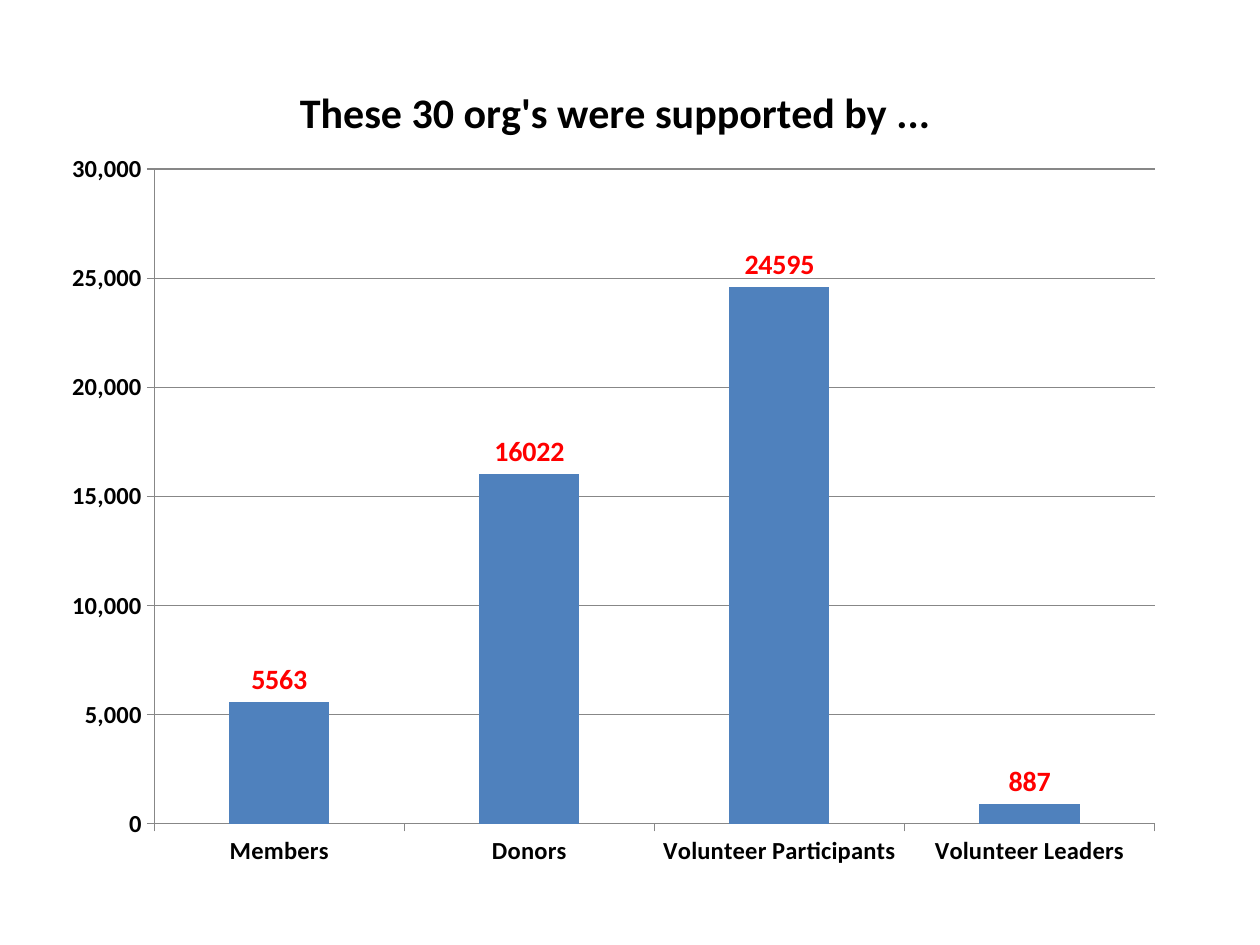
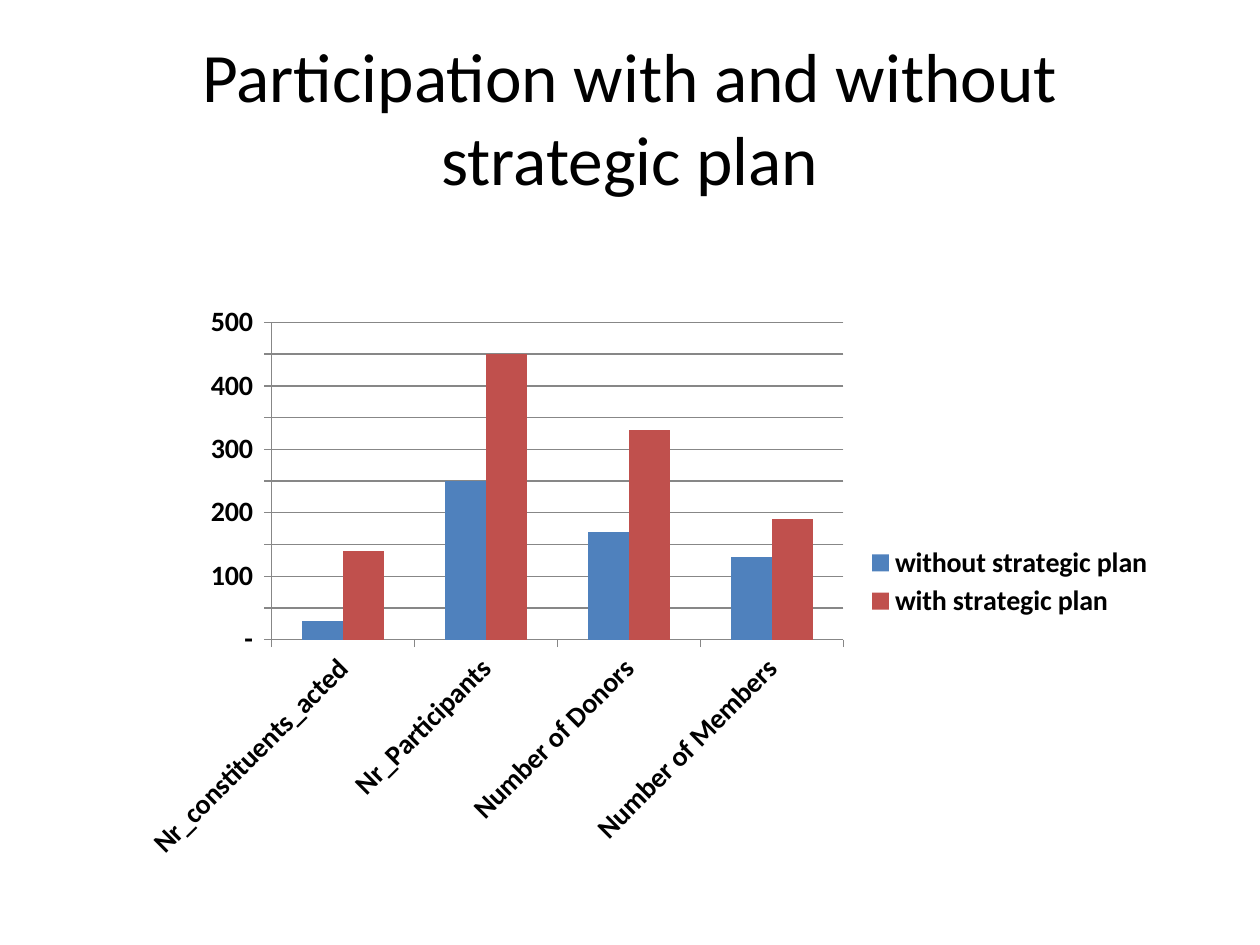
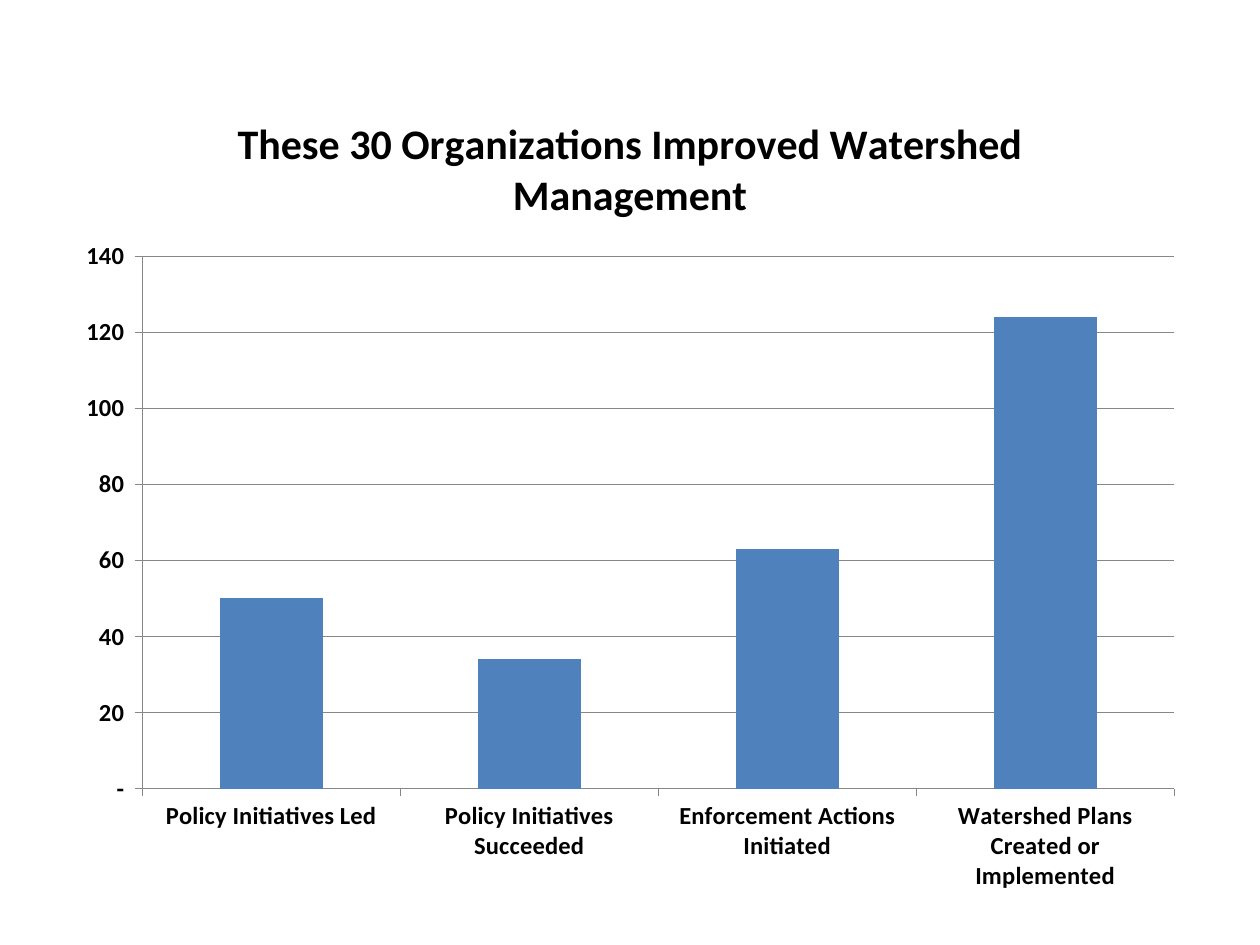
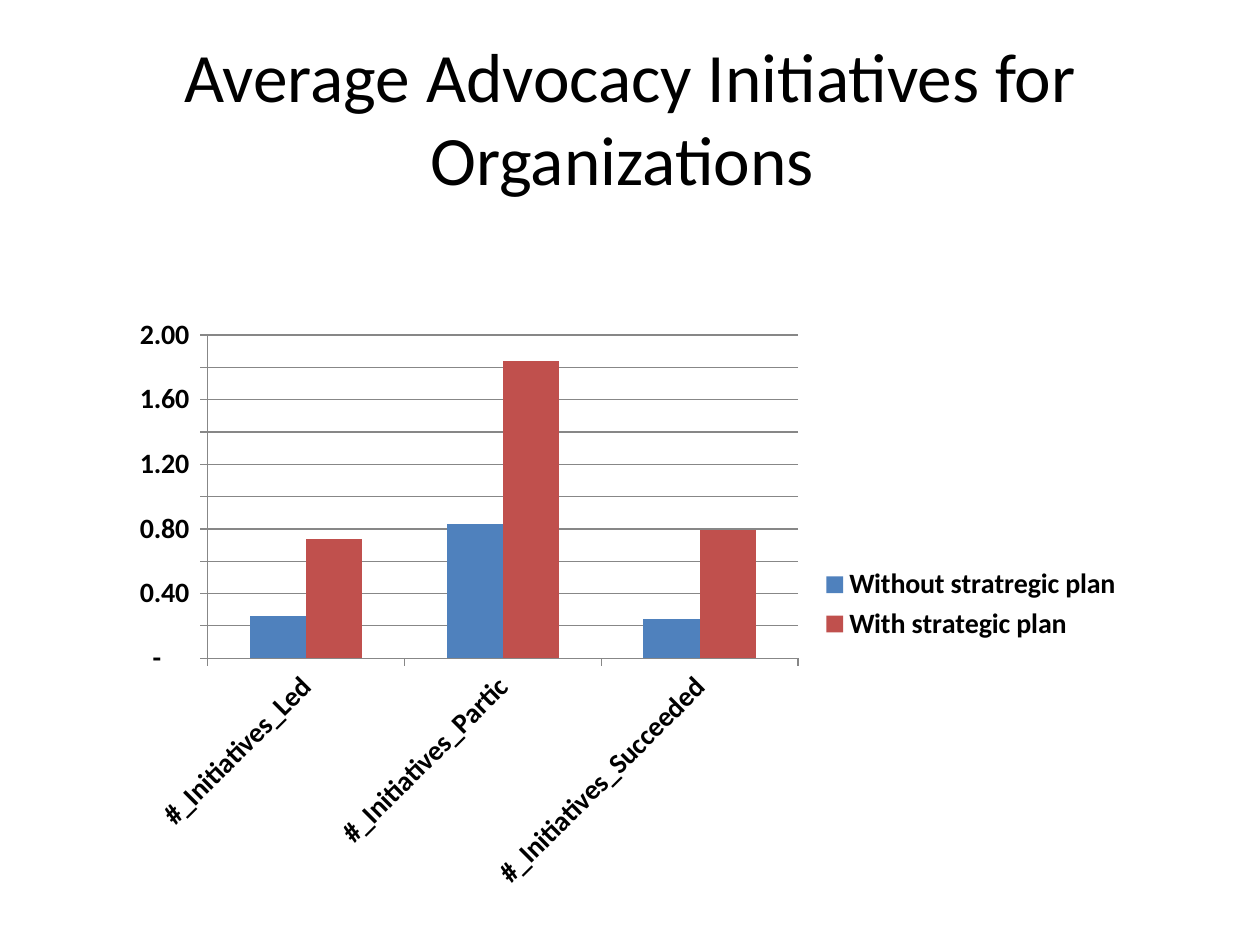
from lxml import etree
from pptx import Presentation
from pptx.chart.data import CategoryChartData
from pptx.dml.color import RGBColor
from pptx.enum.chart import XL_CHART_TYPE, XL_LABEL_POSITION, XL_LEGEND_POSITION, XL_TICK_MARK
from pptx.enum.text import MSO_ANCHOR, PP_ALIGN
from pptx.oxml.ns import qn
from pptx.util import Cm, Pt

COLUMNS = XL_CHART_TYPE.COLUMN_CLUSTERED
OUTSIDE_END = XL_LABEL_POSITION.OUTSIDE_END
LEGEND_RIGHT = XL_LEGEND_POSITION.RIGHT
TICK_OUT = XL_TICK_MARK.OUTSIDE
TICK_NONE = XL_TICK_MARK.NONE
MIDDLE = MSO_ANCHOR.MIDDLE
CENTER = PP_ALIGN.CENTER

# Shared style
FONT = "Calibri"
BLACK, BLUE, RED, GREY = "000000", "4F81BD", "C0504D", "878787"
LABEL_RED = "FF0000"
SERIES_COLORS = (BLUE, RED)
TITLE_ONLY, BLANK = 5, 6
PLAIN = "#,##0"
WHOLE = '_(* #,##0_);_(* \\(#,##0\\);_(* "-"_);_(@_)'
DECIMAL = '_(* #,##0.00_);_(* \\(#,##0.00\\);_(* "-"??_);_(@_)'


def color(hex_text):
    return RGBColor.from_string(hex_text)


def style_font(font, size, bold=False, hex_text=BLACK):
    font.name = FONT
    font.size = Pt(size)
    font.bold = bold
    font.color.rgb = color(hex_text)


def add_titled_slide(deck, text):
    page = deck.slides.add_slide(deck.slide_layouts[TITLE_ONLY])
    title = page.shapes.title
    title.left, title.top, title.width, title.height = Cm(1.27), Cm(0.76), Cm(22.86), Cm(3.18)
    frame = title.text_frame
    frame.text = text
    frame.vertical_anchor = MIDDLE
    para = frame.paragraphs[0]
    para.alignment = CENTER
    style_font(para.runs[0].font, 39.6)
    return page


def add_column_chart(page, place, categories, series):
    """Add a clustered column chart; series maps each name to its values."""
    data = CategoryChartData()
    data.categories = categories
    for name, values in series.items():
        data.add_series(name, values)
    chart = page.shapes.add_chart(COLUMNS, *map(Cm, place), data).chart
    style_font(chart.font, 10)
    chart.has_title = False
    chart.has_legend = False
    plot = chart.plots[0]
    plot.vary_by_categories = False
    plot.gap_width = 150
    plot.overlap = 0
    for column, hex_text in zip(plot.series, SERIES_COLORS):
        column.format.fill.solid()
        column.format.fill.fore_color.rgb = color(hex_text)
    return chart


def style_axes(chart, size, maximum, step, number_format):
    value_axis = chart.value_axis
    for axis in (chart.category_axis, value_axis):
        axis.major_tick_mark = TICK_OUT
        axis.minor_tick_mark = TICK_NONE
        style_font(axis.tick_labels.font, size, bold=True)
        style_line(axis.format.line)
    value_axis.minimum_scale = 0
    value_axis.maximum_scale = maximum
    value_axis.major_unit = step
    value_axis.has_major_gridlines = True
    style_line(value_axis.major_gridlines.format.line)
    value_axis.tick_labels.number_format = number_format
    value_axis.tick_labels.number_format_is_linked = False


def style_line(line):
    line.color.rgb = color(GREY)
    line.width = Pt(0.75)


def make_layout(fractions, inner=False):
    """Build a manual layout from x, y, width and height as shares of the chart."""
    layout = etree.Element(qn("c:layout"))
    manual = etree.SubElement(layout, qn("c:manualLayout"))
    settings = [("layoutTarget", "inner")] if inner else []
    settings += [("xMode", "edge"), ("yMode", "edge")]
    settings += zip("xywh", map(str, fractions))
    for tag, value in settings:
        etree.SubElement(manual, qn("c:" + tag)).set("val", value)
    return layout


def place_plot(chart, fractions):
    area = chart.element.find(".//" + qn("c:plotArea"))
    for old in area.findall(qn("c:layout")):
        area.remove(old)
    area.insert(0, make_layout(fractions, inner=True))


def add_chart_title(chart, text):
    chart.has_title = True
    frame = chart.chart_title.text_frame
    frame.text = text
    style_font(frame.paragraphs[0].runs[0].font, 24, bold=True)
    chart.chart_title.include_in_layout = False


def add_legend(chart, fractions):
    chart.has_legend = True
    chart.legend.position = LEGEND_RIGHT
    chart.legend.include_in_layout = False
    style_font(chart.legend.font, 16, bold=True)
    legend = chart.element.find(".//" + qn("c:legend"))
    for old in legend.findall(qn("c:layout")):
        legend.remove(old)
    legend.find(qn("c:legendPos")).addnext(make_layout(fractions))


def slant_categories(chart):
    for body in chart.element.xpath(".//c:catAx/c:txPr/a:bodyPr"):
        body.set("rot", "-2700000")
        body.set("vert", "horz")


def add_value_labels(chart):
    plot = chart.plots[0]
    plot.has_data_labels = True
    labels = plot.data_labels
    labels.show_value = True
    labels.position = OUTSIDE_END
    style_font(labels.font, 16, bold=True, hex_text=LABEL_RED)


def add_total_slide(deck, title, place, plot_place, totals, axis):
    """Slide with one series, titled inside the chart."""
    page = deck.slides.add_slide(deck.slide_layouts[BLANK])
    chart = add_column_chart(page, place, list(totals), {"Series 1": list(totals.values())})
    add_chart_title(chart, title)
    style_axes(chart, 14, *axis)
    place_plot(chart, plot_place)
    return chart


def add_comparison_slide(deck, title, place, plot_place, legend_place, categories, series, axis):
    """Slide comparing organizations without and with a plan."""
    page = add_titled_slide(deck, title)
    chart = add_column_chart(page, place, categories, series)
    style_axes(chart, 16, *axis)
    slant_categories(chart)
    place_plot(chart, plot_place)
    add_legend(chart, legend_place)


def main():
    deck = Presentation()
    deck.slide_width, deck.slide_height = Cm(25.4), Cm(19.05)

    # Supporters
    supporters = add_total_slide(
        deck, "These 30 org's were supported by ...",
        (1.07, 1.07, 22.66, 16.71), (0.09, 0.14, 0.89, 0.79),
        {"Members": 5563, "Donors": 16022,
         "Volunteer Participants": 24595, "Volunteer Leaders": 887},
        (30000, 5000, PLAIN))
    add_value_labels(supporters)

    # Participation
    add_comparison_slide(
        deck, "Participation with and without strategic plan",
        (2.54, 5.92, 20.96, 11.63), (0.14, 0.05, 0.55, 0.55), (0.71, 0.43, 0.28, 0.14),
        ["Nr_constituents_acted", "Nr_Participants", "Number of Donors", "Number of Members"],
        {"without strategic plan": [30, 250, 170, 130],
         "with strategic plan": [140, 450, 330, 190]},
        (500, 50, WHOLE))

    # Watershed management
    add_total_slide(
        deck, "These 30 Organizations Improved Watershed Management",
        (1.27, 1.7, 22.86, 16.51), (0.07, 0.21, 0.91, 0.65),
        {"Policy Initiatives Led": 50, "Policy Initiatives Succeeded": 34,
         "Enforcement Actions Initiated": 63, "Watershed Plans Created or Implemented": 124},
        (140, 20, WHOLE))

    # Advocacy
    add_comparison_slide(
        deck, "Average Advocacy Initiatives for Organizations ",
        (2.34, 6.15, 20.52, 12.07), (0.09, 0.05, 0.58, 0.54), (0.69, 0.43, 0.3, 0.14),
        ["#_Initiatives_Led", "#_Initiatives_Partic", "#_Initiatives_Succeeded"],
        {"Without stratregic plan": [0.26, 0.83, 0.24],
         "With strategic plan": [0.74, 1.84, 0.79]},
        (2, 0.2, DECIMAL))

    deck.save("out.pptx")


if __name__ == "__main__":
    main()
